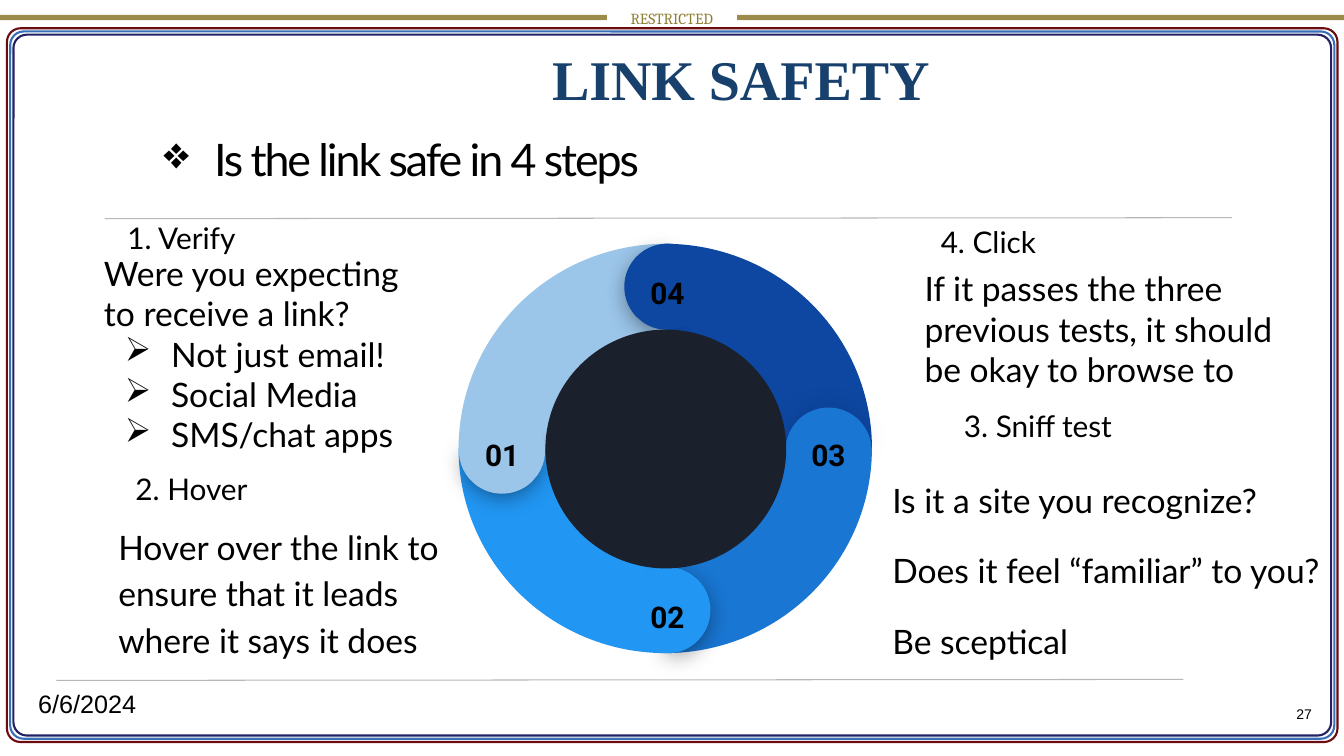
from pptx import Presentation
from pptx import util as u
from pptx.dml.color import RGBColor
from pptx.enum import shapes, text
from pptx.oxml import parse_xml
from pptx.oxml.ns import nsdecls

Pt = u.Pt
SHAPE = shapes.MSO_SHAPE
ALIGN = text.PP_ALIGN
ANCHOR = text.MSO_ANCHOR

BLACK = RGBColor(0x00, 0x00, 0x00)
GOLD = RGBColor(0x9C, 0x8C, 0x4B)
DARK_GOLD = RGBColor(0x8F, 0x7D, 0x31)
MAROON = RGBColor(0x6C, 0x0C, 0x10)
FRAME_BLUE = RGBColor(0x38, 0x6F, 0xB7)
INDIGO = RGBColor(0x22, 0x21, 0x64)
TITLE_BLUE = RGBColor(0x17, 0x40, 0x6D)
RULE_GREY = RGBColor(0xB7, 0xB7, 0xB7)
HUB = RGBColor(0x1B, 0x21, 0x2C)
STEP_COLORS = [
    RGBColor(0x9B, 0xC5, 0xE9),
    RGBColor(0x21, 0x96, 0xF3),
    RGBColor(0x19, 0x76, 0xD2),
    RGBColor(0x0D, 0x47, 0xA1),
]
DIRECTIONS = [(-1, 0), (0, 1), (1, 0), (0, -1)]
INSET = 9.6


def add_shape(page, kind, box, fill=None, line=None, rotation=0, adjust=()):
    shape = page.shapes.add_shape(kind, *[Pt(value) for value in box])
    shape.shadow.inherit = False
    shape.rotation = rotation
    for index, value in enumerate(adjust):
        shape.adjustments[index] = value
    if fill is None:
        shape.fill.background()
    else:
        shape.fill.solid()
        shape.fill.fore_color.rgb = fill
    if line is None:
        shape.line.fill.background()
    else:
        shape.line.color.rgb = line
        shape.line.width = Pt(1.5)
    return shape


def add_centered(page, kind, center, size, **style):
    left, top = (middle - length / 2 for middle, length in zip(center, size))
    return add_shape(page, kind, (left, top, *size), **style)


def cast_shadow(shape, opacity, angle):
    effects = shape._element.spPr.find("{*}effectLst")
    effects.append(parse_xml(
        f'<a:outerShdw {nsdecls("a")} blurRad="{Pt(18)}" dist="{Pt(4)}" '
        f'dir="{angle * 60000}" algn="bl" rotWithShape="0"><a:srgbClr val="000000">'
        f'<a:alpha val="{opacity * 1000}"/></a:srgbClr></a:outerShdw>'))


def set_indent(para, left, first=0, bullet=None):
    properties = para._p.get_or_add_pPr()
    properties.set("marL", str(Pt(left)))
    properties.set("indent", str(Pt(first)))
    if bullet:
        properties.append(parse_xml(f'<a:buChar {nsdecls("a")} char="{bullet}"/>'))


def write_para(para, words, size, font="Lato", color=BLACK, bold=False,
               align=ALIGN.LEFT, after=0, spacing=None):
    para.alignment = align
    para.space_before = Pt(0)
    para.space_after = Pt(after)
    if spacing:
        para.line_spacing = spacing
    span = para.add_run()
    span.text = words
    span.font.name = font
    span.font.size = Pt(size)
    span.font.bold = bold
    span.font.color.rgb = color
    return span


def set_frame(frame, anchor, inset):
    frame.word_wrap = True
    frame.auto_size = text.MSO_AUTO_SIZE.NONE
    frame.vertical_anchor = anchor
    frame.margin_left = frame.margin_right = Pt(inset)
    frame.margin_top = frame.margin_bottom = Pt(inset)


def add_text(page, box, lines, size, anchor=ANCHOR.MIDDLE, inset=INSET, **style):
    frame = page.shapes.add_textbox(*[Pt(value) for value in box]).text_frame
    set_frame(frame, anchor, inset)
    for index, words in enumerate(lines):
        para = frame.add_paragraph() if index else frame.paragraphs[0]
        write_para(para, words, size, **style)
    return frame


def add_rule(page, left, top, width):
    rule = page.shapes.add_connector(
        shapes.MSO_CONNECTOR.STRAIGHT, Pt(left + width), Pt(top), Pt(left), Pt(top + 0.7))
    rule.line.color.rgb = RULE_GREY
    rule.line.width = Pt(0.75)
    rule._element.spPr.append(parse_xml(f'<a:effectLst {nsdecls("a")}/>'))


def build_banner(page, box):
    left, top, width, height = box
    bar = 433.5
    for start in (left, left + width - bar):
        add_shape(page, SHAPE.RECTANGLE, (start, top + 10.6, bar, 3.8), fill=GOLD)
    add_text(page, (left + 394.6, top + 2.9, 170.6, height), ["RESTRICTED"], 11,
             anchor=ANCHOR.TOP, inset=3.6, font="Cambria", color=DARK_GOLD,
             align=ALIGN.CENTER)


def build_border(page, box):
    left, top, width, height = box
    for index, color in enumerate((MAROON, FRAME_BLUE, INDIGO)):
        gap = index * 2.3
        add_shape(page, SHAPE.ROUNDED_RECTANGLE,
                  (left + gap, top + gap, width - 2 * gap, height - 2 * gap),
                  line=color, adjust=[0.019])


def build_heading(page, box):
    left, top, width, height = box
    title = page.shapes.title
    title.left, title.top = Pt(left), Pt(top + 67.7)
    title.width, title.height = Pt(765.4), Pt(height)
    set_frame(title.text_frame, ANCHOR.TOP, INSET)
    para = title.text_frame.paragraphs[0]
    set_indent(para, 36, -36, "❖")
    span = write_para(para, "Is the link safe in 4 steps", 32, spacing=0.85)
    span._r.get_or_add_rPr().set("spc", "-150")
    add_text(page, (left + 43.2, top, width, height), ["LINK SAFETY"], 40,
             anchor=ANCHOR.TOP, font="Times New Roman", color=TITLE_BLUE, bold=True,
             align=ALIGN.CENTER)


def build_left_steps(page, box):
    left, top, width, height = box
    add_text(page, (left + 64.8, top, 196.6, 46.8), ["1. Verify"], 21.3)
    frame = add_text(page, (left, top + 43.9, 289.4, 125.3),
                     ["Were you expecting to receive a link?", "Not just email!",
                      "Social Media", "SMS/chat apps"], 24)
    question, *channels = frame.paragraphs
    set_indent(question, 48)
    for channel in channels:
        channel.level = 1
        set_indent(channel, 96, -33, "➢")
    add_text(page, (left + 70.6, top + 179.3, 196.6, 46.8), ["2. Hover"], 21.3)
    add_text(page, (left + 58.3, top + 239, 259.2, 72.7),
             ["Hover over the link to ensure that it leads where it says it does"],
             24, after=21.3, spacing=1.15)


def build_right_steps(page, box):
    left, top, width, height = box
    add_text(page, (left + 34.6, top, 196.6, 46.8), ["4. Click"], 21.3)
    add_text(page, (left + 23, top + 33.1, 290.9, 119.5),
             ["If it passes the three previous tests, it should be okay to browse to"],
             24, anchor=ANCHOR.TOP, after=21.3)
    add_text(page, (left + 51.1, top + 131.8, 196.6, 46.8), ["3. Sniff test"], 21.3)
    add_text(page, (left, top + 182.9, width, 151.2),
             ["Is it a site you recognize?", "Does it feel “familiar” to you?",
              "Be sceptical"], 24, after=21.3)


def build_ring(page, box):
    left, top, width, height = box
    across, down = left + width / 2, top + height / 2
    for turn in range(4):
        size = (height, width) if turn % 2 else (width, height)
        add_centered(page, SHAPE.PIE, (across, down), size,
                     fill=STEP_COLORS[-turn % 4], rotation=90 * turn,
                     adjust=[107.96, 162.01])
    for index, ((x, y), color) in enumerate(zip(DIRECTIONS, STEP_COLORS)):
        center = (across + 116.6 * x + 1.5 * abs(y), down + 115.5 * y + 1.5 * abs(x))
        cap = add_centered(page, SHAPE.PIE, center, (55.2, 55.2), fill=color,
                           rotation=(39.5 - 90 * index) % 360,
                           adjust=[189.54, 83.81])
        if index == 2:
            cast_shadow(cap, 13, 266)
        else:
            cast_shadow(cap, 55, 90)
        add_centered(page, SHAPE.CHORD, center, (61.6, 61.6), fill=color,
                     rotation=(4.1 - 90 * index) % 360, adjust=[25.01, 18.12])
        number = (across + 116.5 * x + 1.5 * abs(y) - 27, down + 116 * y - 18, 54, 28)
        add_text(page, number, [f"{index + 1:02}"], 21.3, anchor=ANCHOR.TOP,
                 font="Roboto", bold=True, align=ALIGN.CENTER)
    add_centered(page, SHAPE.OVAL, (across + 0.4, down + 0.4), (172, 170.6), fill=HUB)


def build_footer(page, box):
    left, top, width, height = box
    add_text(page, (left, top, 288, 25.2), ["6/6/2024"], 18, inset=7.2, font="Arial")
    add_text(page, (left + width - 57.6, top, 57.6, height), ["27"], 10,
             font="Arial", align=ALIGN.RIGHT)


def main():
    deck = Presentation()
    deck.slide_width, deck.slide_height = Pt(960), Pt(540)
    page = deck.slides.add_slide(deck.slide_layouts[5])
    build_banner(page, (0, 0, 960, 20.9))
    build_border(page, (5, 20.2, 950.4, 509.8))
    build_heading(page, (107.3, 22.3, 757.4, 95.8))
    build_left_steps(page, (16.6, 146.2, 320, 312))
    build_right_steps(page, (627.8, 149, 352, 334))
    add_rule(page, 74.9, 155.5, 805)
    add_rule(page, 40.3, 485.3, 805)
    build_ring(page, (327.6, 174.2, 295.2, 292.3))
    build_footer(page, (20.2, 489.6, 926.6, 41))
    deck.save("out.pptx")


if __name__ == "__main__":
    main()
